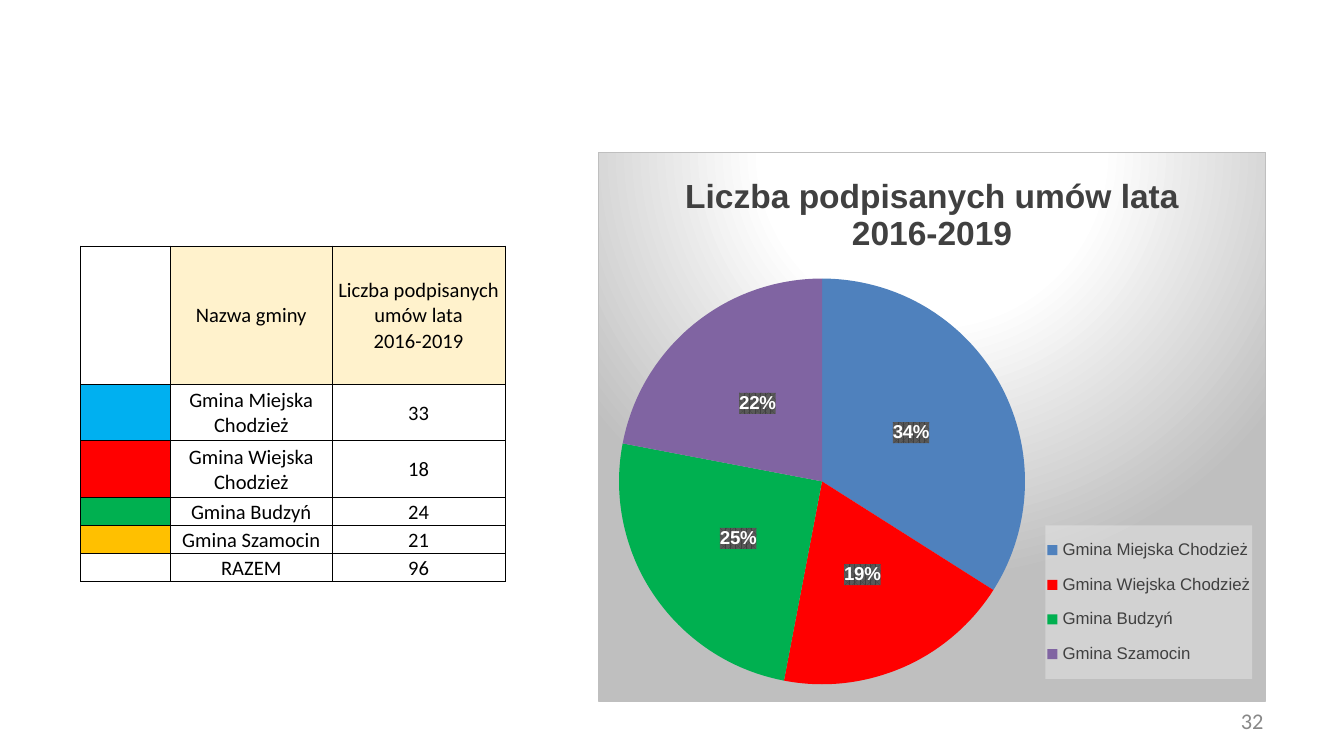
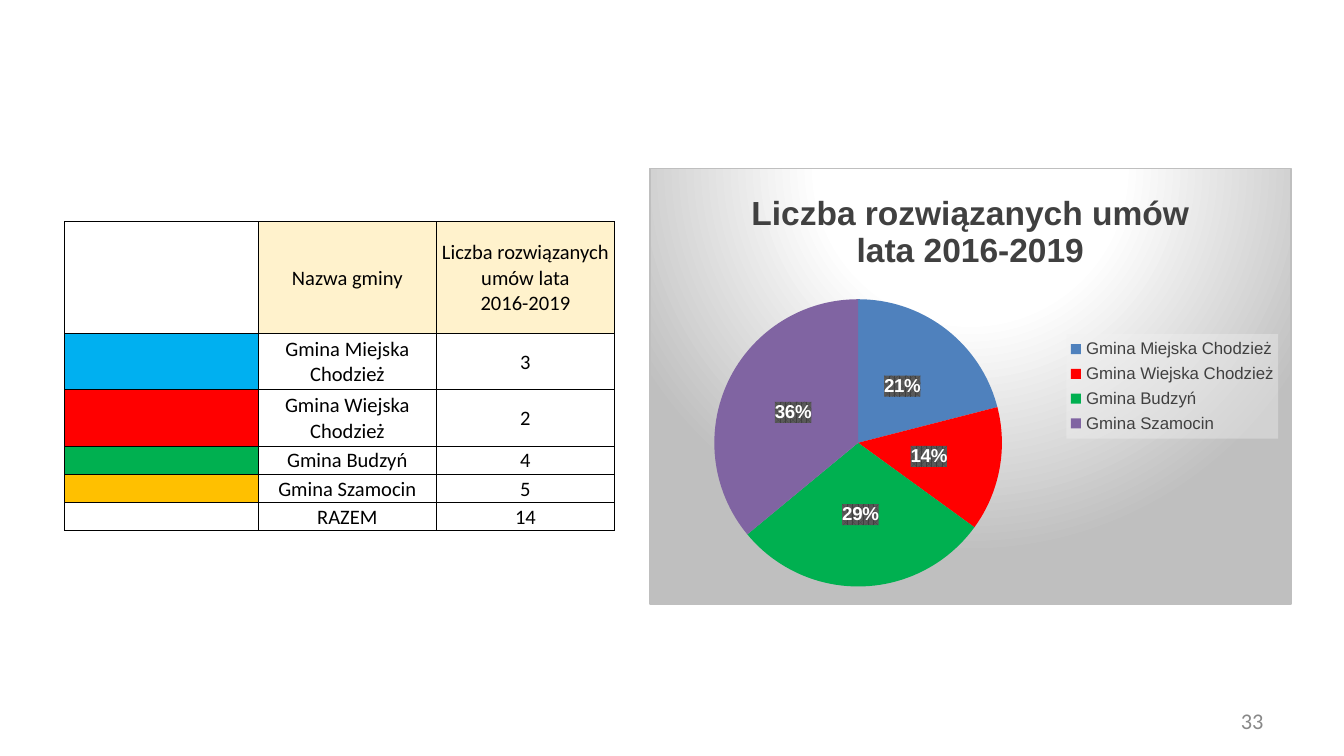
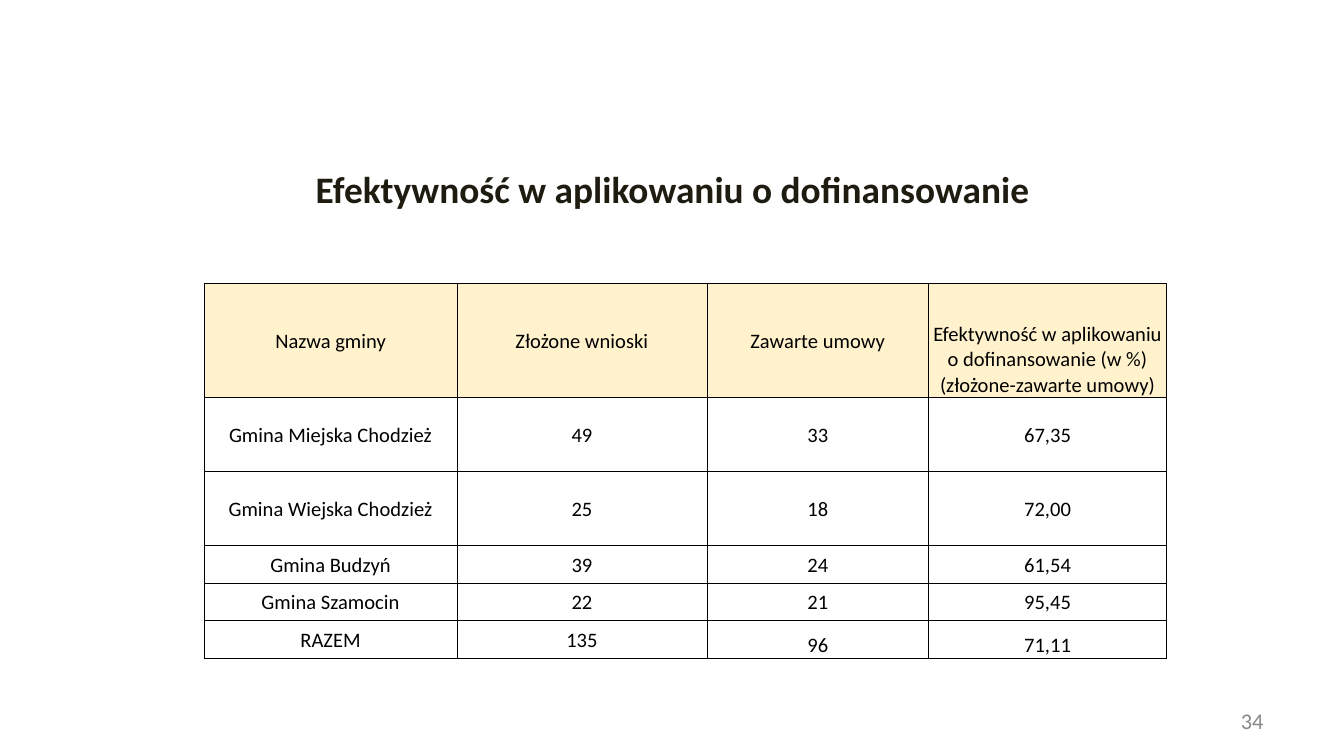
from lxml.etree import SubElement
from pptx import Presentation
from pptx.chart.data import CategoryChartData
from pptx.dml.color import RGBColor
from pptx.enum.chart import XL_CHART_TYPE as ChartType
from pptx.enum.chart import XL_LABEL_POSITION as LabelPosition
from pptx.enum.chart import XL_LEGEND_POSITION as LegendPosition
from pptx.enum.text import MSO_ANCHOR as Anchor
from pptx.enum.text import PP_ALIGN as Align
from pptx.oxml import parse_xml
from pptx.oxml.ns import nsdecls, qn
from pptx.util import Inches, Pt

SLIDE_WIDTH = 10
SLIDE_HEIGHT = SLIDE_WIDTH * 9 / 16

HEADER_FILL = "FFF2CC"
SWATCHES = ["00B0F0", "FF0000", "00B050", "FFC000"]
SLICES = ["4F81BD", "FF0000", "00B050", "8064A2"]
COMMUNES = ["Gmina Miejska Chodzież", "Gmina Wiejska Chodzież",
            "Gmina Budzyń", "Gmina Szamocin"]
ROW_NAMES = COMMUNES + ["RAZEM"]

TABLE_TEXT = {"name": "Calibri", "size": Pt(11), "bold": False, "color": "000000"}
HEADING_TEXT = {"name": "Calibri", "size": Pt(20), "bold": True, "color": "1E1C11"}
NUMBER_TEXT = {"name": "Calibri", "size": Pt(12), "color": "888888"}
CHART_TEXT = {"name": "Arial", "size": Pt(10), "color": "000000"}
CHART_TITLE = {"name": "Arial", "size": Pt(18), "bold": True, "color": "404040"}
LEGEND_TEXT = {"name": "Arial", "size": Pt(9), "color": "404040"}
LABEL_TEXT = {"name": "Arial", "size": Pt(10), "bold": True, "color": "FFFFFF"}

CHART_BACKGROUND = """<a:gradFill><a:gsLst>
<a:gs pos="0"><a:srgbClr val="FFFFFF"/></a:gs>
<a:gs pos="39000"><a:srgbClr val="FFFFFF"/></a:gs>
<a:gs pos="100000"><a:srgbClr val="BFBFBF"/></a:gs></a:gsLst>
<a:path path="circle"><a:fillToRect l="50000" t="-80000" r="50000" b="180000"/></a:path>
</a:gradFill><a:ln w="9525"><a:solidFill><a:srgbClr val="BFBFBF"/></a:solidFill></a:ln>"""
LEGEND_BACKGROUND = """<a:solidFill><a:srgbClr val="F2F2F2"><a:alpha val="39000"/>
</a:srgbClr></a:solidFill>"""
LABEL_BACKGROUND = """<a:pattFill prst="pct75"><a:fgClr><a:srgbClr val="404040"/></a:fgClr>
<a:bgClr><a:srgbClr val="595959"/></a:bgClr></a:pattFill>"""


def rgb(value):
    return RGBColor.from_string(value)


def format_font(font, style):
    for name, value in style.items():
        if name == "color":
            font.color.rgb = rgb(value)
        else:
            setattr(font, name, value)


# Text
def add_text(slide, box, text, style, align=Align.LEFT, anchor=Anchor.TOP):
    frame = slide.shapes.add_textbox(*map(Inches, box)).text_frame
    frame.word_wrap = True
    frame.vertical_anchor = anchor
    paragraph = frame.paragraphs[0]
    paragraph.alignment = align
    run = paragraph.add_run()
    run.text = text
    format_font(run.font, style)


def add_page(presentation, number):
    slide = presentation.slides.add_slide(presentation.slide_layouts[6])
    add_text(slide, (7.17, 5.21, 2.33, 0.3), str(number), NUMBER_TEXT,
             Align.RIGHT, Anchor.MIDDLE)
    return slide


# Tables
def add_borders(cell):
    properties = cell._tc.get_or_add_tcPr()
    for side in "LRTB":
        properties.append(parse_xml(
            f'<a:ln{side} {nsdecls("a")} w="6350"><a:solidFill>'
            f'<a:srgbClr val="000000"/></a:solidFill></a:ln{side}>'))


def fill_cell(cell, text, color, anchor):
    margins = {"margin_left": 0.01, "margin_right": 0.01,
               "margin_top": 0.01, "margin_bottom": 0}
    for name, value in margins.items():
        setattr(cell, name, Inches(value))
    cell.vertical_anchor = anchor
    add_borders(cell)
    if color:
        cell.fill.solid()
        cell.fill.fore_color.rgb = rgb(color)
    else:
        cell.fill.background()
    cell.text = text
    for paragraph in cell.text_frame.paragraphs:
        paragraph.alignment = Align.CENTER
        for run in paragraph.runs:
            format_font(run.font, TABLE_TEXT)
        if not text:  # keeps short rows from growing
            SubElement(paragraph._p, qn("a:endParaRPr"), sz="1100")


def add_grid(slide, corner, widths, heights, rows, fills, bottom_cells=()):
    size = (sum(widths), sum(heights))
    table = slide.shapes.add_table(len(rows), len(widths),
                                   *map(Inches, corner + size)).table
    table.first_row = table.horz_banding = False
    for column, width in zip(table.columns, widths):
        column.width = Inches(width)
    for row, height in zip(table.rows, heights):
        row.height = Inches(height)
    for r, texts in enumerate(rows):
        for c, text in enumerate(texts):
            anchor = Anchor.BOTTOM if (r, c) in bottom_cells else Anchor.MIDDLE
            fill_cell(table.cell(r, c), text, fills.get((r, c)), anchor)


def add_commune_table(slide, corner, widths, header_height, header, counts):
    rows = [["", "Nazwa gminy", header]]
    rows += [["", name, str(count)]
             for name, count in zip(ROW_NAMES, counts + [sum(counts)])]
    fills = {(0, 1): HEADER_FILL, (0, 2): HEADER_FILL}
    fills.update({(r, 0): color for r, color in enumerate(SWATCHES, 1)})
    heights = [header_height] + [0.42] * 2 + [0.21] * 3
    add_grid(slide, corner, widths, heights, rows, fills)


# Charts
def background(content):
    return parse_xml(f'<c:spPr {nsdecls("c", "a")}>{content}</c:spPr>')


def manual_layout(box, inner=False):
    target = '<c:layoutTarget val="inner"/>' if inner else ""
    modes = "".join(f'<c:{axis}Mode val="edge"/>' for axis in "xy")
    places = "".join(f'<c:{key} val="{value}"/>' for key, value in zip("xywh", box))
    return parse_xml(f'<c:layout {nsdecls("c")}><c:manualLayout>{target}{modes}'
                     f'{places}</c:manualLayout></c:layout>')


def place_part(part, layout, previous=None):
    for old in part.findall(qn("c:layout")):
        part.remove(old)
    if previous is None:
        part.insert(0, layout)
    else:
        previous.addnext(layout)


def add_pie(slide, box, title, percents, pie_box, legend_box):
    data = CategoryChartData()
    data.categories = COMMUNES
    data.add_series("Series 1", percents)
    chart = slide.shapes.add_chart(ChartType.PIE, *map(Inches, box), data).chart
    format_font(chart.font, CHART_TEXT)
    space = chart._chartSpace
    space.find(qn("c:chart")).addnext(background(CHART_BACKGROUND))

    # Title
    chart.has_title = True
    frame = chart.chart_title.text_frame
    frame.text = title
    for paragraph in frame.paragraphs:
        format_font(paragraph.font, CHART_TITLE)
        for run in paragraph.runs:
            format_font(run.font, CHART_TITLE)

    # Slices and labels
    plot = chart.plots[0]
    plot.vary_by_categories = True
    for index, color in enumerate(SLICES):
        fill = plot.series[0].points[index].format.fill
        fill.solid()
        fill.fore_color.rgb = rgb(color)
    labels = plot.series[0].data_labels
    options = {"show_percentage": True, "show_value": False,
               "number_format": "0%", "number_format_is_linked": False,
               "position": LabelPosition.CENTER}
    for name, value in options.items():
        setattr(labels, name, value)
    format_font(labels.font, LABEL_TEXT)
    labels._element.find(qn("c:txPr")).addprevious(background(LABEL_BACKGROUND))
    place_part(space.find(".//" + qn("c:plotArea")), manual_layout(pie_box, inner=True))

    # Legend
    chart.has_legend = True
    legend = chart.legend
    legend.position = LegendPosition.RIGHT
    legend.include_in_layout = False
    format_font(legend.font, LEGEND_TEXT)
    element = legend._element
    place_part(element, manual_layout(legend_box), element.find(qn("c:legendPos")))
    element.find(qn("c:txPr")).addprevious(background(LEGEND_BACKGROUND))


# Slides
def add_signed_slide(presentation):
    slide = add_page(presentation, 32)
    add_commune_table(slide, (0.6, 1.83), (0.67, 1.2, 1.29), 1.03,
                      "Liczba podpisanych umów lata\n2016-2019", [33, 18, 24, 21])
    add_pie(slide, (4.45, 1.13, 4.97, 4.09),
            "Liczba podpisanych umów lata\n2016-2019", [34, 19, 25, 22],
            (0.03, 0.23, 0.61, 0.74), (0.67, 0.68, 0.31, 0.28))


def add_terminated_slide(presentation):
    slide = add_page(presentation, 33)
    add_commune_table(slide, (0.48, 1.65), (1.44, 1.33, 1.32), 0.83,
                      "Liczba rozwiązanych umów lata\v2016-2019", [3, 2, 4, 5])
    add_pie(slide, (4.83, 1.25, 4.78, 3.25),
            "Liczba rozwiązanych umów lata 2016-2019", [21, 14, 29, 36],
            (0.1, 0.3, 0.45, 0.66), (0.65, 0.38, 0.33, 0.24))


def add_effectiveness_slide(presentation):
    slide = add_page(presentation, 34)
    header = ["Nazwa gminy", "Złożone wnioski", "Zawarte umowy",
              "Efektywność w aplikowaniu o dofinansowanie (w %)\v(złożone-zawarte umowy)"]
    applications = [49, 25, 39, 22]
    contracts = [33, 18, 24, 21]
    rows = [header]
    for name, applied, signed in zip(ROW_NAMES, applications + [sum(applications)],
                                     contracts + [sum(contracts)]):
        rate = f"{100 * signed / applied:.2f}".replace(".", ",")
        rows.append([name, str(applied), str(signed), rate])
    add_grid(slide, (1.52, 2.11), (1.88, 1.86, 1.65, 1.77),
             [0.85] + [0.55] * 2 + [0.28] * 3, rows,
             {(0, c): HEADER_FILL for c in range(4)},
             bottom_cells={(0, 3), (5, 2), (5, 3)})
    add_text(slide, (2.25, 1.19, 5.84, 0.44),
             "Efektywność w aplikowaniu o dofinansowanie", HEADING_TEXT)


def main():
    presentation = Presentation()
    presentation.slide_width = Inches(SLIDE_WIDTH)
    presentation.slide_height = Inches(SLIDE_HEIGHT)
    add_signed_slide(presentation)
    add_terminated_slide(presentation)
    add_effectiveness_slide(presentation)
    presentation.save("out.pptx")


if __name__ == "__main__":
    main()
